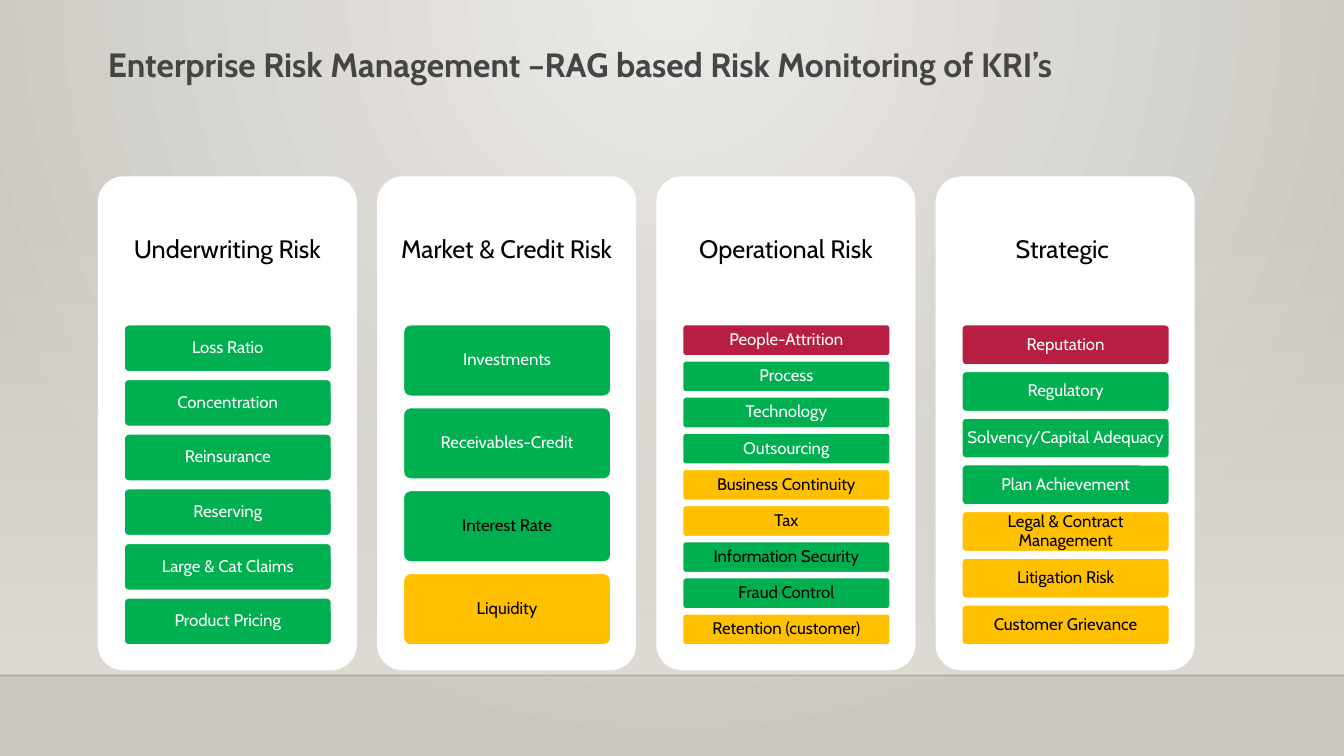
from pptx import Presentation
from pptx.dml.color import RGBColor
from pptx.enum.shapes import MSO_CONNECTOR, MSO_SHAPE
from pptx.enum.text import MSO_ANCHOR, PP_ALIGN
from pptx.oxml import parse_xml
from pptx.oxml.ns import nsdecls, qn
from pptx.util import Pt

SCALE = 9144  # EMU in one px, 100 px to the inch
WIDTH, HEIGHT = 1333, 750
FONT = "Cabin"

WHITE = RGBColor(0xFF, 0xFF, 0xFF)
BLACK = RGBColor(0x00, 0x00, 0x00)
TITLE_GREY = RGBColor(0x45, 0x45, 0x45)
RED_FILL = RGBColor(0xB7, 0x1E, 0x42)
GREEN_FILL = RGBColor(0x00, 0xB0, 0x50)
AMBER_FILL = RGBColor(0xFF, 0xC0, 0x00)
GLOW = RGBColor(0xEC, 0xEA, 0xE7)
STONE = RGBColor(0xCA, 0xC7, 0xC1)
WALL = RGBColor(0xDF, 0xDB, 0xD5)
FLOOR_LINE = RGBColor(0x00, 0x00, 0x01)

RECTANGLE, ROUNDED = MSO_SHAPE.RECTANGLE, MSO_SHAPE.ROUNDED_RECTANGLE
STRAIGHT = MSO_CONNECTOR.STRAIGHT
LEFT, CENTER = PP_ALIGN.LEFT, PP_ALIGN.CENTER
TOP, MIDDLE = MSO_ANCHOR.TOP, MSO_ANCHOR.MIDDLE

# Tile fill and text colour for each rating
RED = (RED_FILL, WHITE)
GREEN = (GREEN_FILL, WHITE)
GREEN_DARK_TEXT = (GREEN_FILL, BLACK)
AMBER = (AMBER_FILL, BLACK)

TITLE = "Enterprise Risk Management –RAG based Risk Monitoring of KRI’s"
RISKS = {
    "Underwriting Risk": [
        ("Loss Ratio", GREEN), ("Concentration", GREEN), ("Reinsurance", GREEN),
        ("Reserving", GREEN), ("Large & Cat Claims", GREEN), ("Product Pricing", GREEN),
    ],
    "Market & Credit Risk": [
        ("Investments", GREEN), ("Receivables-Credit", GREEN),
        ("Interest Rate", GREEN_DARK_TEXT), ("Liquidity", AMBER),
    ],
    "Operational Risk": [
        ("People-Attrition", RED), ("Process", GREEN), ("Technology", GREEN),
        ("Outsourcing", GREEN), ("Business Continuity", AMBER), ("Tax", AMBER),
        ("Information Security", GREEN_DARK_TEXT), ("Fraud Control", GREEN_DARK_TEXT),
        ("Retention (customer)", AMBER),
    ],
    "Strategic ": [
        ("Reputation", RED), ("Regulatory", GREEN), ("Solvency/Capital Adequacy", GREEN),
        ("Plan Achievement", GREEN), ("Legal & Contract Management", AMBER),
        ("Litigation Risk", AMBER), ("Customer Grievance", AMBER),
    ],
}

# Card and tile layout in px
CARD_LEFT, CARD_TOP, CARD_WIDTH, CARD_HEIGHT, CARD_PITCH = 97, 175, 257, 490, 277
HEADING_HEIGHT = 147
TILE_INDENT, TILE_WIDTH, TILES_HEIGHT = 26, 206, 318
GAP_RATIO = 2 / 13  # gap between tiles as a share of the tile height


def px(*lengths):
    return [round(length * SCALE) for length in lengths]


class SlideBuilder:
    def __init__(self, slide):
        self.slide = slide

    def gradient(self, owner, fill, stops, direction):
        """Fill with (position, colour, opacity) stops, all in percent."""
        fill.gradient()
        stop_xml = "".join(
            f'<a:gs pos="{position * 1000}"><a:srgbClr val="{color}">'
            f'<a:alpha val="{opacity * 1000}"/></a:srgbClr></a:gs>'
            for position, color, opacity in stops)
        old = owner.element.find(".//" + qn("a:gradFill"))
        old.getparent().replace(old, parse_xml(
            f'<a:gradFill {nsdecls("a")} rotWithShape="1">'
            f"<a:gsLst>{stop_xml}</a:gsLst>{direction}</a:gradFill>"))

    def add_text(self, shape, text, size, color, inset, align=CENTER, anchor=MIDDLE,
                 spacing=0.9, bold=False):
        frame = shape.text_frame
        margin = px(inset)[0]
        frame_format = {"word_wrap": True, "vertical_anchor": anchor,
                        "margin_left": margin, "margin_right": margin,
                        "margin_top": margin, "margin_bottom": margin}
        for name, value in frame_format.items():
            setattr(frame, name, value)
        para = frame.paragraphs[0]
        para.alignment, para.line_spacing = align, spacing
        span = para.add_run()
        span.text = text
        for name, value in {"name": FONT, "size": Pt(size), "bold": bold}.items():
            setattr(span.font, name, value)
        span.font.color.rgb = color

    def title(self, text, *place):
        title = self.slide.shapes.title
        for name, value in zip(("left", "top", "width", "height"), px(*place)):
            setattr(title, name, value)
        self.add_text(title, text, 24, TITLE_GREY, 10, LEFT, TOP, 1.0, True)
        title.text_frame.margin_top = title.text_frame.margin_bottom = px(5)[0]

    def shape(self, kind, *place, fill=None, outline=None):
        shape = self.slide.shapes.add_shape(kind, *px(*place))
        shape.shadow.inherit = False
        if kind == ROUNDED:
            shape.adjustments[0] = 0.1
        if fill is not None:
            shape.fill.solid()
            shape.fill.fore_color.rgb = fill
        if outline is None:
            shape.line.fill.background()
        else:
            shape.line.color.rgb = outline
            shape.line.width = Pt(1.25)
        return shape

    def line(self, *ends, color, opacity):
        line = self.slide.shapes.add_connector(STRAIGHT, *px(*ends))
        line.line.color.rgb = color
        line.line.width = Pt(1)
        line.element.find(".//" + qn("a:srgbClr")).append(
            parse_xml(f'<a:alpha {nsdecls("a")} val="{opacity * 1000}"/>'))
        line.element.spPr.append(parse_xml(f'<a:effectLst {nsdecls("a")}/>'))

    def card(self, left, heading, tiles):
        self.shape(ROUNDED, left, CARD_TOP, CARD_WIDTH, CARD_HEIGHT, fill=WHITE)
        box = self.slide.shapes.add_textbox(
            *px(left, CARD_TOP, CARD_WIDTH, HEADING_HEIGHT))
        self.add_text(box, heading, 18, BLACK, 7)
        count = len(tiles)
        height = TILES_HEIGHT / (count + (count - 1) * GAP_RATIO)
        for row, (label, (fill, color)) in enumerate(tiles):
            top = CARD_TOP + HEADING_HEIGHT + row * height * (1 + GAP_RATIO)
            tile = self.shape(ROUNDED, left + TILE_INDENT, top, TILE_WIDTH, height,
                              fill=fill, outline=WHITE)
            self.add_text(tile, label, 12, color, 4)


def main():
    deck = Presentation()
    deck.slide_width, deck.slide_height = px(WIDTH, HEIGHT)
    page = deck.slides.add_slide(deck.slide_layouts[5])
    builder = SlideBuilder(page)

    # Backdrop: glow from the top, wall and floor line
    builder.gradient(
        page, page.background.fill, [(0, GLOW, 100), (100, STONE, 100)],
        '<a:path path="circle">'
        '<a:fillToRect l="43000" t="0" r="43000" b="100000"/></a:path>')
    wall = builder.shape(RECTANGLE, 0, 221, WIDTH, 449)
    builder.gradient(wall, wall.fill, [(0, WALL, 0), (100, WALL, 100)],
                     '<a:lin ang="5400000" scaled="0"/>')
    builder.line(0, 670, WIDTH, 670, color=FLOOR_LINE, opacity=20)

    # Title and risk cards
    builder.title(TITLE, 97, 39, 1178, 76)
    for column, (heading, tiles) in enumerate(RISKS.items()):
        builder.card(CARD_LEFT + column * CARD_PITCH, heading, tiles)

    deck.save("out.pptx")


if __name__ == "__main__":
    main()
